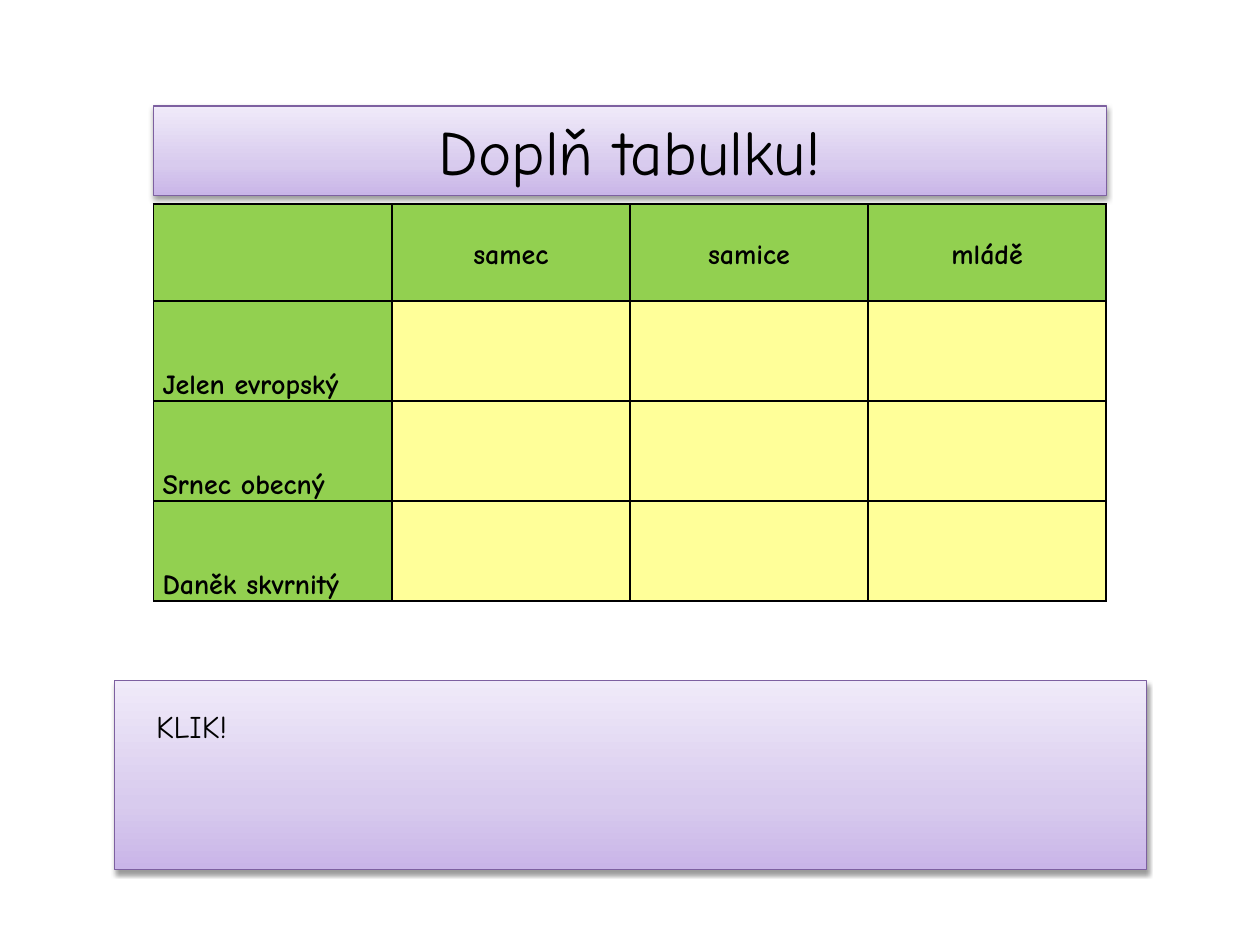
from dataclasses import dataclass

from lxml.etree import SubElement
from pptx import Presentation
from pptx.dml.color import RGBColor
from pptx.enum.shapes import MSO_SHAPE
from pptx.enum.text import MSO_ANCHOR as Anchor, MSO_AUTO_SIZE as AutoSize, PP_ALIGN as Align
from pptx.oxml import parse_xml
from pptx.oxml.ns import nsdecls, qn
from pptx.util import Inches, Pt


@dataclass(frozen=True)
class Theme:
    font: str = "Comic Neue"
    ink: str = "000000"
    label_fill: str = "92D050"
    answer_fill: str = "FFFF99"
    panel_line: str = "7D60A0"
    panel_stops: tuple = ((0, "C9B5E8"), (35, "D8CBEE"), (100, "F0EAF9"))
    title_size: int = 36
    prompt_size: int = 18
    cell_size: int = 16


THEME = Theme()
HEADINGS = ["", "samec", "samice", "mládě"]
ANIMALS = ["Jelen evropský", "Srnec obecný", "Daněk skvrnitý"]


def format_text(para, size, bold=False, align=Align.LEFT):
    para.alignment = align
    for span in para.runs:
        span.font.name = THEME.font
        span.font.size = Pt(size)
        span.font.bold = bold
        span.font.color.rgb = RGBColor.from_string(THEME.ink)


def style_panel(shape):
    """Give a shape the violet gradient, thin outline and soft shadow."""
    shape.fill.gradient()
    shape.fill.gradient_angle = 90
    properties = shape._element.spPr
    stops = properties.find(f".//{qn('a:gsLst')}")
    stops.clear()
    for position, color in THEME.panel_stops:
        stop = SubElement(stops, qn("a:gs"), pos=str(position * 1000))
        SubElement(stop, qn("a:srgbClr"), val=color)
    shape.line.color.rgb = RGBColor.from_string(THEME.panel_line)
    shape.line.width = Pt(0.75)
    shape.shadow.inherit = False
    properties.find(qn("a:effectLst")).append(parse_xml(
        f'<a:outerShdw {nsdecls("a")} blurRad="{Pt(3.1)}" dist="{Pt(1.6)}" '
        f'dir="5400000" rotWithShape="0"><a:srgbClr val="{THEME.ink}">'
        '<a:alpha val="38000"/></a:srgbClr></a:outerShdw>'))


def add_title(page, left, top, width, height):
    title = page.shapes.title
    title.left, title.top, title.width, title.height = left, top, width, height
    style_panel(title)
    frame = title.text_frame
    frame.text = "Doplň tabulku!"
    frame.auto_size = AutoSize.NONE
    frame.vertical_anchor = Anchor.TOP
    format_text(frame.paragraphs[0], THEME.title_size, align=Align.CENTER)


def add_borders(cell):
    properties = cell._tc.get_or_add_tcPr()
    for index, side in enumerate(("lnL", "lnR", "lnT", "lnB")):
        properties.insert(index, parse_xml(
            f'<a:{side} {nsdecls("a")} w="{Pt(1)}"><a:solidFill>'
            f'<a:srgbClr val="{THEME.ink}"/></a:solidFill></a:{side}>'))


def style_cell(cell, is_heading, is_label):
    color = THEME.label_fill if is_label else THEME.answer_fill
    cell.fill.solid()
    cell.fill.fore_color.rgb = RGBColor.from_string(color)
    cell.margin_left = cell.margin_right = Inches(0.07)
    cell.margin_top = cell.margin_bottom = 0
    cell.vertical_anchor = Anchor.MIDDLE if is_heading else Anchor.BOTTOM
    para = cell.text_frame.paragraphs[0]
    para.line_spacing = 1.15
    format_text(para, THEME.cell_size, bold=True,
                align=Align.CENTER if is_heading else Align.LEFT)
    add_borders(cell)


def add_animal_table(page, left, top, width, height):
    rows = [HEADINGS] + [[animal, "", "", ""] for animal in ANIMALS]
    table = page.shapes.add_table(len(rows), len(HEADINGS), left, top, width, height).table
    table.first_row = table.horz_banding = False
    heading_height = Inches(0.77)
    for row_index, texts in enumerate(rows):
        table.rows[row_index].height = (
            heading_height if row_index == 0 else (height - heading_height) // len(ANIMALS))
        for column_index, text in enumerate(texts):
            cell = table.cell(row_index, column_index)
            cell.text = text
            style_cell(cell, row_index == 0, row_index == 0 or column_index == 0)


def add_answer_panel(page, left, top, width, height):
    panel = page.shapes.add_shape(MSO_SHAPE.RECTANGLE, left, top, width, height)
    style_panel(panel)
    prompt = page.shapes.add_textbox(
        left + Inches(0.23), top + Inches(0.16), Inches(0.85), Inches(0.4))
    prompt.text_frame.text = "KLIK!"
    prompt.text_frame.word_wrap = False
    format_text(prompt.text_frame.paragraphs[0], THEME.prompt_size)


def main():
    deck = Presentation()
    deck.slide_width, deck.slide_height = Inches(10), Inches(7.5)
    page = deck.slides.add_slide(deck.slide_layouts.get_by_name("Title Only"))
    left, width = Inches(1.22), Inches(7.56)
    add_title(page, left, Inches(0.84), width, Inches(0.71))
    add_animal_table(page, left, Inches(1.62), width, Inches(3.15))
    add_answer_panel(page, Inches(0.91), Inches(5.4), Inches(8.19), Inches(1.5))
    deck.save("out.pptx")


if __name__ == "__main__":
    main()
